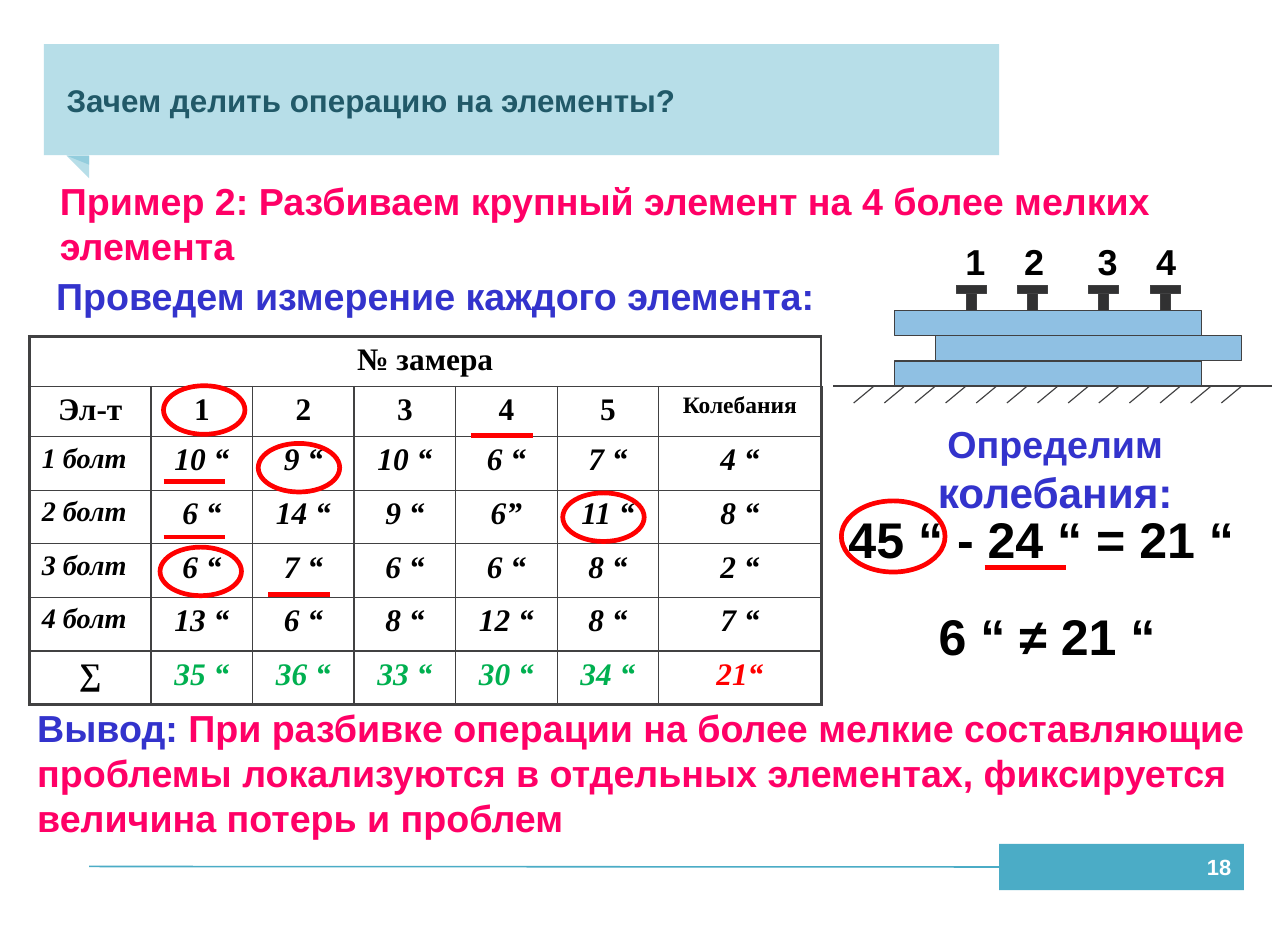
from lxml.etree import SubElement
from pptx import Presentation
from pptx.dml.color import RGBColor
from pptx.enum.shapes import MSO_CONNECTOR, MSO_SHAPE
from pptx.enum.text import MSO_ANCHOR, PP_ALIGN
from pptx.oxml.ns import qn
from pptx.util import Pt

BLACK = RGBColor(0x00, 0x00, 0x00)
WHITE = RGBColor(0xFF, 0xFF, 0xFF)
RED = RGBColor(0xFF, 0x00, 0x00)
GREEN = RGBColor(0x00, 0xB0, 0x50)
BLUE = RGBColor(0x33, 0x33, 0xCC)
PINK = RGBColor(0xFF, 0x00, 0x66)
TEAL = RGBColor(0x4B, 0xAC, 0xC6)
DARK_TEAL = RGBColor(0x21, 0x59, 0x68)
PALE_TEAL = RGBColor(0xB7, 0xDE, 0xE8)
FOLD = RGBColor(0x93, 0xCD, 0xDD)
PLATE = RGBColor(0x8F, 0xC0, 0xE3)
BOLT = RGBColor(0x31, 0x31, 0x32)
EDGE = RGBColor(0x41, 0x41, 0x42)

TITLE = "Зачем делить операцию на элементы?"
EXAMPLE = "Пример 2: Разбиваем крупный элемент на 4 более мелких элемента"
MEASURE = "Проведем измерение каждого элемента:"
CONCLUSION = (" При разбивке операции на более мелкие составляющие проблемы "
              "локализуются в отдельных элементах, фиксируется величина потерь и проблем")
ROWS = [
    ["№ замера", "", "", "", "", "", ""],
    ["Эл-т", "1", "2", "3", "4", "5", "Колебания"],
    ["1 болт", "10 “", "9 “", "10 “", "6 “", "7 “", "4 “"],
    ["2 болт", "6 “", "14 “", "9 “", "6”", "11 “", "8 “"],
    ["3 болт", "6 “", "7 “", "6 “", "6 “", "8 “", "2 “"],
    ["4 болт", "13 “", "6 “", "8 “", "12 “", "8 “", "7 “"],
    ["∑", "35 “", "36 “", "33 “", "30 “", "34 “", "21“"],
]
COL_WIDTHS = [77.8] + [64.8] * 5 + [103.7]
ROW_HEIGHTS = [32] * 2 + [34.2] * 5

PLATES = [(571, 230.4), (597, 214.2), (571, 198)]
BOLTS = [("1", 620.3, 622.4), ("2", 659.2, 659.9), ("3", 704.5, 706.7), ("4", 744.1, 744.1)]
GROUND_Y = 246.4
HATCHES = 13

CIRCLES = [(104.4, 246.2, 52, 31), (164.9, 283, 52, 31), (359.3, 314.6, 52, 31),
           (102.2, 349.2, 52, 31), (537.1, 319.7, 66.2, 45.4)]
UNDERLINES = [(301, 278, 39), (104.4, 307.4, 39), (104.4, 342.7, 39),
              (171.4, 379.4, 39), (628.6, 362.2, 51.8)]


def add_run(p, text, size, color, font="Arial", italic=False):
    r = p.add_run()
    r.text = text
    r.font.name = font
    r.font.size = Pt(size)
    r.font.bold = True
    r.font.italic = italic
    r.font.color.rgb = color


def write(sp, runs, align=PP_ALIGN.LEFT, anchor=MSO_ANCHOR.TOP, wrap=True,
          insets=(8, 4, 8, 4), before=0):
    tf = sp.text_frame
    tf.word_wrap = wrap
    tf.vertical_anchor = anchor
    tf.margin_left, tf.margin_top, tf.margin_right, tf.margin_bottom = map(Pt, insets)
    p = tf.paragraphs[0]
    p.alignment = align
    if before:
        p.space_before = Pt(before)
    for run in runs:
        add_run(p, *run)


def add_text(shapes, box, runs, **layout):
    write(shapes.add_textbox(*map(Pt, box)), runs, **layout)


def add_figure(shapes, kind, box, fill=None, line=None, width=0.75):
    sp = shapes.add_shape(kind, *map(Pt, box))
    sp.shadow.inherit = False
    if fill is None:
        sp.fill.background()
    else:
        sp.fill.solid()
        sp.fill.fore_color.rgb = fill
    if line is None:
        sp.line.fill.background()
    else:
        sp.line.color.rgb = line
        sp.line.width = Pt(width)
    return sp


def add_line(shapes, x1, y1, x2, y2, color=EDGE, width=0.75):
    c = shapes.add_connector(MSO_CONNECTOR.STRAIGHT, Pt(x1), Pt(y1), Pt(x2), Pt(y2))
    c.line.color.rgb = color
    c.line.width = Pt(width)
    SubElement(c._element.spPr, qn("a:effectLst"))
    return c


def set_borders(cell, widths):
    tcPr = cell._tc.get_or_add_tcPr()
    for i, (side, width) in enumerate(zip("LRTB", widths)):
        ln = tcPr.makeelement(qn("a:ln" + side), {"w": str(Pt(width))})
        fill = SubElement(ln, qn("a:solidFill"))
        SubElement(fill, qn("a:srgbClr"), val=str(EDGE))
        tcPr.insert(i, ln)


def cell_style(row, col):
    last = len(ROWS) - 1
    if row == last and col:
        return 20, RED if col == 6 else GREEN, True
    if 1 < row < last:
        return 20 if col else 18, BLACK, True
    return 15 if (row, col) == (1, 6) else 20, BLACK, False


def build_table(s):
    frame = s.shapes.add_table(len(ROWS), len(COL_WIDTHS), Pt(18.7), Pt(214.6),
                               Pt(sum(COL_WIDTHS)), Pt(sum(ROW_HEIGHTS)))
    table = frame.table
    table.first_row = table.horz_banding = False
    for column, width in zip(table.columns, COL_WIDTHS):
        column.width = Pt(width)
    for row, height in zip(table.rows, ROW_HEIGHTS):
        row.height = Pt(height)
    table.cell(0, 0).merge(table.cell(0, 6))
    for i, texts in enumerate(ROWS):
        for j, text in enumerate(texts):
            cell = table.cell(i, j)
            cell.fill.background()
            outer = (j == 0, j == 6, i == 0, i == len(ROWS) - 1)
            set_borders(cell, [2.25 if edge else 1 for edge in outer])
            cell.margin_left = cell.margin_right = Pt(8)
            cell.margin_top = cell.margin_bottom = Pt(4)
            if text:
                size, color, italic = cell_style(i, j)
                p = cell.text_frame.paragraphs[0]
                p.alignment = PP_ALIGN.LEFT if size == 18 else PP_ALIGN.CENTER
                add_run(p, text, size, color, "Times New Roman", italic)


def build_bolted_plates(s):
    shapes = s.shapes.add_group_shape().shapes
    add_line(shapes, 532.1, GROUND_Y, 812.2, GROUND_Y)
    for i in range(HATCHES):
        x = 558 + i * 19.56
        add_line(shapes, x, GROUND_Y, x - 13, GROUND_Y + 10.8)
    for x, y in PLATES:
        add_figure(shapes, MSO_SHAPE.RECTANGLE, (x, y, 195.8, 16), PLATE, EDGE)
    for label, x, label_x in BOLTS:
        add_figure(shapes, MSO_SHAPE.RECTANGLE, (x - 3.25, 187.2, 6.5, 10.8), BOLT, EDGE)
        add_figure(shapes, MSO_SHAPE.RECTANGLE, (x - 9.7, 182.2, 19.4, 5), BOLT, EDGE)
        add_text(shapes, (label_x - 14, 157, 28, 18.7), [(label, 23, BLACK)],
                 align=PP_ALIGN.CENTER, anchor=MSO_ANCHOR.MIDDLE, wrap=False)


def build_frame(s):
    for height, color in ((14.4, PALE_TEAL), (5.8, FOLD)):
        fold = add_figure(s.shapes, MSO_SHAPE.RIGHT_TRIANGLE, (42.5, 99.3, 14.4, height), color)
        fold.rotation = 180
    title = add_figure(s.shapes, MSO_SHAPE.RECTANGLE, (28.1, 28.1, 609.8, 70.9), PALE_TEAL)
    write(title, [(TITLE, 20, DARK_TEAL)], anchor=MSO_ANCHOR.MIDDLE, insets=(14.4, 0, 7.2, 0))
    number = add_figure(s.shapes, MSO_SHAPE.RECTANGLE, (637.9, 538.6, 156.2, 29.5), TEAL)
    write(number, [("18", 14, WHITE)], align=PP_ALIGN.RIGHT, anchor=MSO_ANCHOR.MIDDLE)
    rule = add_line(s.shapes, 637.9, 553.4, 56.9, 553, TEAL, 1)
    rule.begin_connect(number, 1)


def main():
    prs = Presentation()
    prs.slide_width, prs.slide_height = Pt(822.24), Pt(595.44)
    s = prs.slides.add_slide(prs.slide_layouts[6])
    build_frame(s)
    add_text(s.shapes, (30.2, 109.4, 781.2, 67), [(EXAMPLE, 24, PINK)], before=6.8)
    build_table(s)
    build_bolted_plates(s)
    centred = {"align": PP_ALIGN.CENTER}
    single = {"align": PP_ALIGN.CENTER, "anchor": MSO_ANCHOR.MIDDLE, "wrap": False}
    add_text(s.shapes, (15.8, 166.3, 524.2, 43.9), [(MEASURE, 24, BLUE)], **single)
    add_text(s.shapes, (527.8, 275.8, 291.6, 43.9),
             [("Определим", 24, BLUE), (" колебания:", 27, BLUE)], **single)
    add_text(s.shapes, (15.8, 445.7, 789.8, 96.5),
             [("Вывод:", 24, BLUE), (CONCLUSION, 24, PINK)], before=6.8)
    add_text(s.shapes, (524.2, 320.4, 281.5, 48.2), [("45 “ - 24 “ = 21 “", 32, BLACK)], **centred)
    add_text(s.shapes, (527.8, 382.3, 281.5, 48.2), [("6 “ ≠ 21 “", 32, BLACK)], **centred)
    for box in CIRCLES:
        add_figure(s.shapes, MSO_SHAPE.OVAL, box, line=RED, width=3)
    for x, y, length in UNDERLINES:
        add_line(s.shapes, x, y, x + length, y, RED, 3)
    prs.save("out.pptx")


if __name__ == "__main__":
    main()
